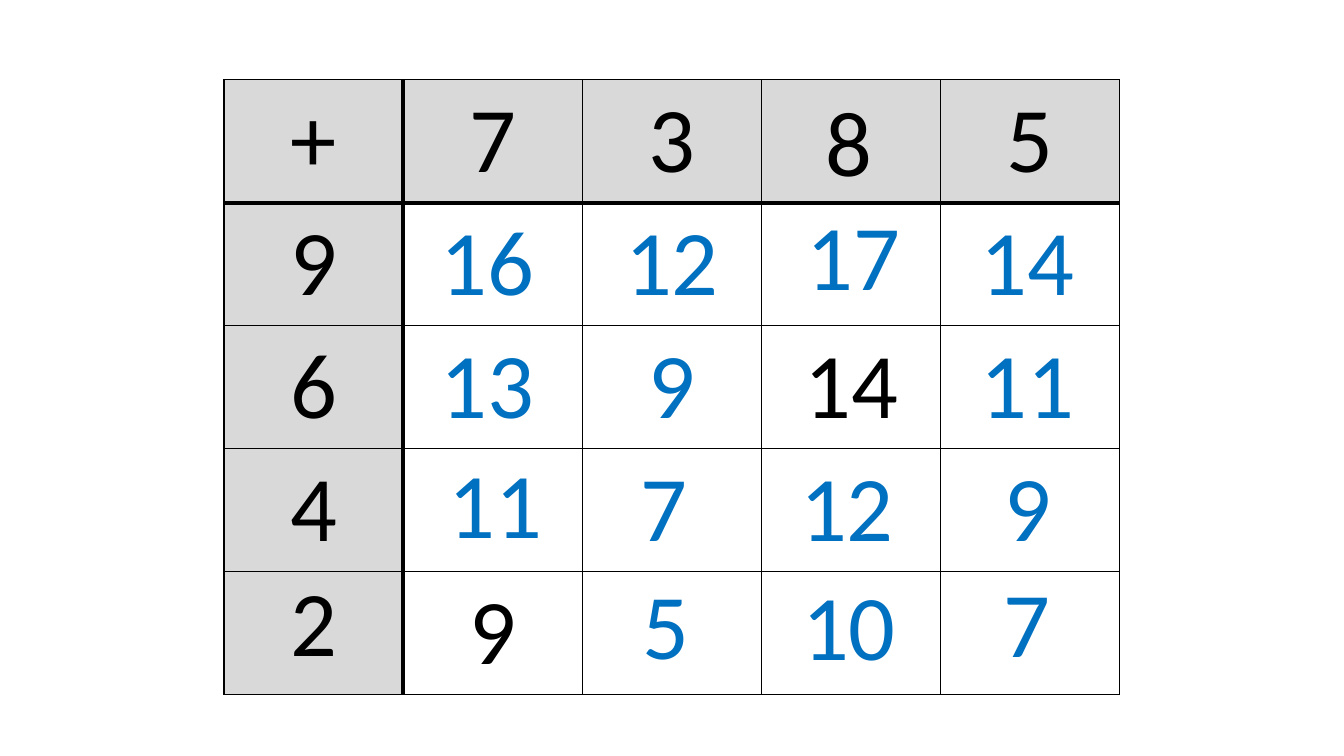
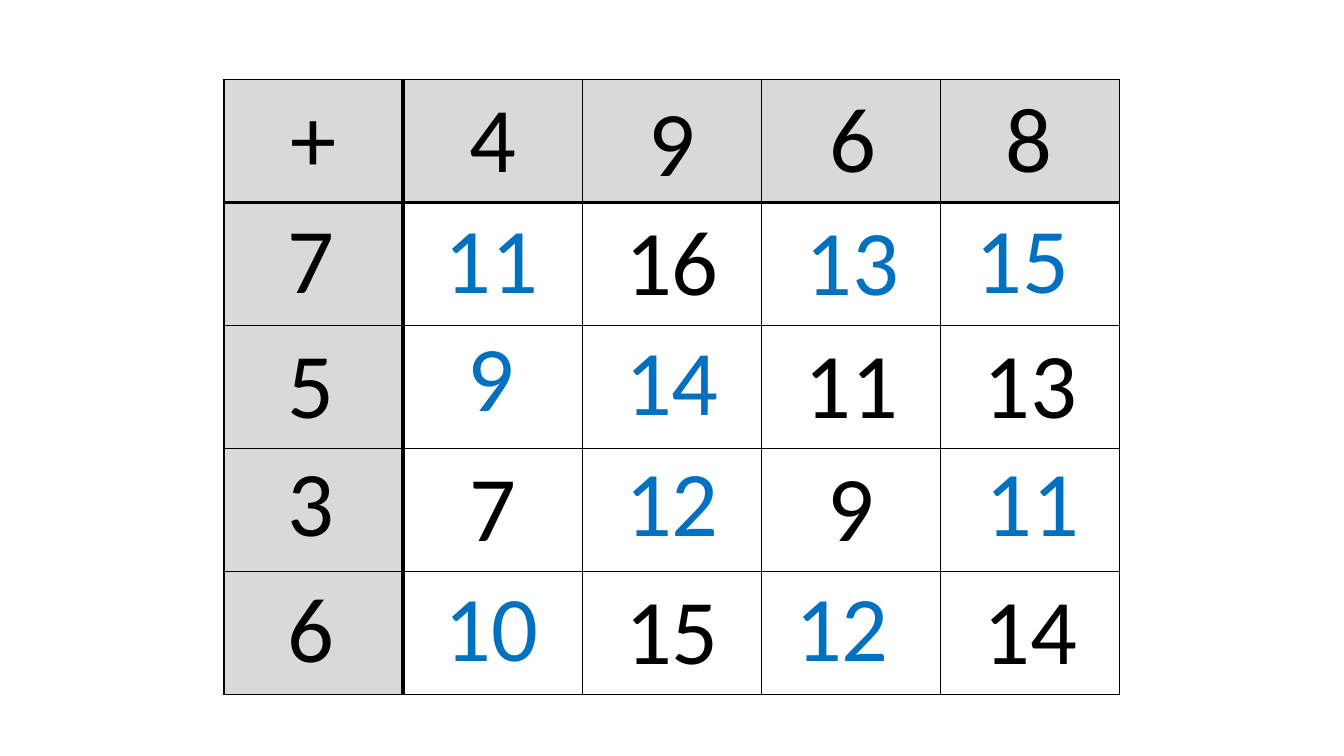
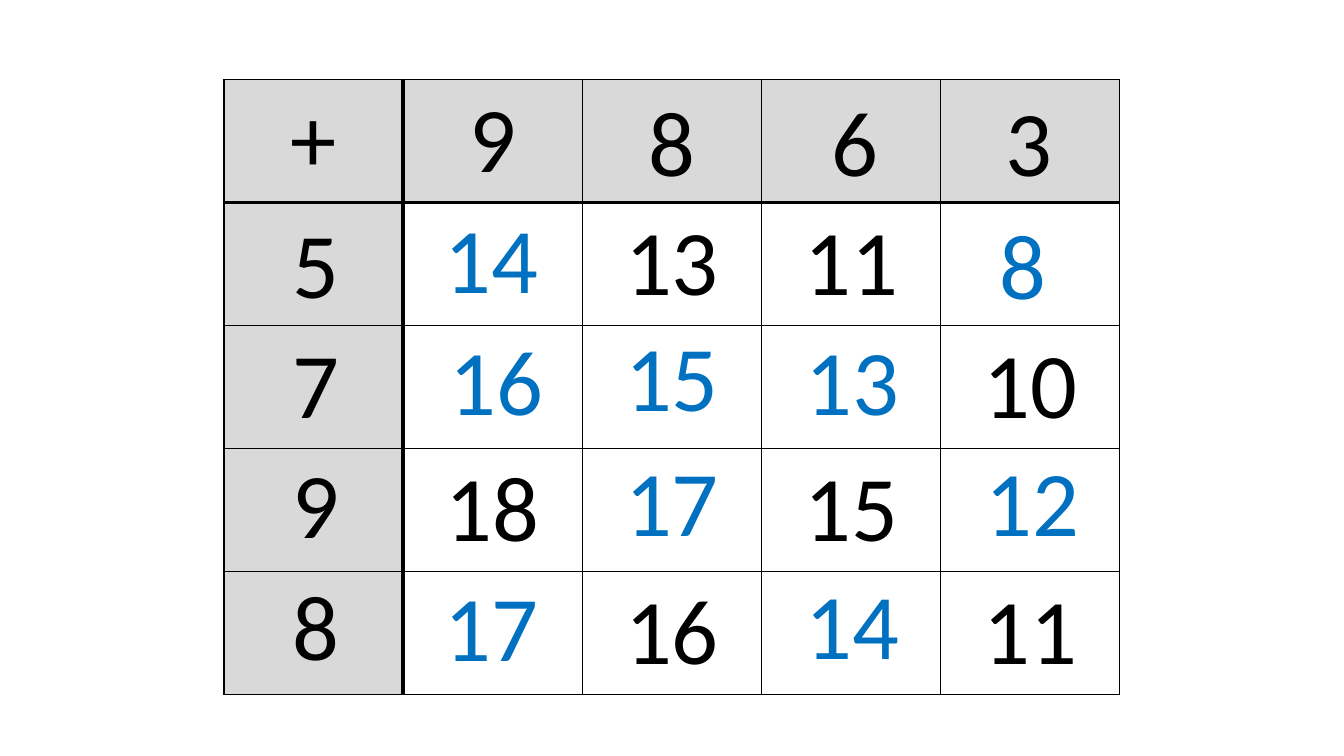
import pptx
import pptx.dml.color
import pptx.enum.text
import pptx.oxml
import pptx.oxml.ns
import pptx.util

Pt = pptx.util.Pt
RGBColor = pptx.dml.color.RGBColor
PP_ALIGN = pptx.enum.text.PP_ALIGN
MSO_ANCHOR = pptx.enum.text.MSO_ANCHOR
MSO_AUTO_SIZE = pptx.enum.text.MSO_AUTO_SIZE

# Shared style
BLACK = RGBColor(0x00, 0x00, 0x00)
WHITE = RGBColor(0xFF, 0xFF, 0xFF)
HEADER_GRAY = RGBColor(0xD9, 0xD9, 0xD9)
ANSWER_BLUE = RGBColor(0x00, 0x70, 0xC0)
FONT = "Calibri"
FONT_SIZE = 66
THIN, THICK = 1, 3

# Shared grid, in points
SLIDE_WIDTH, SLIDE_HEIGHT = 960, 540
GRID_LEFT, GRID_TOP = 160, 56.88
CELL_WIDTH, CELL_HEIGHT = 128, 87.84
GRID_SIZE = 5
BOX_WIDTH, BOX_HEIGHT = 103, 87.12

# Addends of each slide; numbers in "loose" stand in text boxes, keyed by
# (row, column), with their shift in points from the centre of the cell.
EXERCISES = [
    {
        "top": (7, 3, 8, 5),
        "side": (9, 6, 4, 2),
        "loose": {
            (1, 1): (-4, -3), (1, 2): (0, -3), (1, 4): (-2, -3),
            (2, 1): (-4, -3.5), (2, 2): (0, -3.5),
            (3, 1): (2, -5), (3, 2): (-6, -3.5),
            (2, 4): (-2, -3.5), (3, 4): (-2, -3.5),
            (4, 0): (0, -8.5), (0, 3): (-1.5, 0),
            (1, 3): (1.5, -7), (3, 3): (-3, -3.5), (4, 3): (-1.5, -6),
            (4, 2): (-4.5, -7), (4, 4): (-2.5, -8),
        },
    },
    {
        "top": (4, 9, 6, 8),
        "side": (7, 5, 3, 6),
        "loose": {
            (3, 0): (-2, -6.5), (0, 3): (1, -3), (2, 0): (-2, -3.5),
            (0, 4): (-1, -3), (4, 0): (-2, -4.5), (0, 2): (0, 0),
            (1, 0): (-2, -4.5),
            (1, 1): (-1, -4.5), (1, 3): (1, -3), (1, 4): (-5.5, -4.5),
            (2, 1): (-1, -8), (2, 2): (0, -5),
            (3, 2): (0, -7), (3, 4): (1.5, -7),
            (4, 1): (-1, -5), (4, 3): (-6.5, -5),
        },
    },
    {
        "top": (9, 8, 6, 3),
        "side": (5, 7, 9, 8),
        "loose": {
            (3, 0): (2, -5), (0, 3): (3, 0), (1, 0): (2, -1),
            (0, 2): (0, 0), (4, 0): (2, -6), (0, 4): (-1, 0),
            (2, 0): (2, -3),
            (1, 1): (-1, -4.5), (1, 4): (-5.5, 0),
            (2, 1): (2.5, -5), (2, 2): (0, -8), (2, 3): (1, -5),
            (3, 2): (0, -7), (3, 4): (1.5, -7),
            (4, 1): (-1, -5), (4, 3): (1, -6.5),
        },
    },
]


def cell_text(exercise, row, column):
    """Plus sign in the corner, addends along the edges, sums inside."""
    if row == 0 and column == 0:
        return "+"
    addend_above = exercise["top"][column - 1] if column else 0
    addend_beside = exercise["side"][row - 1] if row else 0
    return str(addend_above + addend_beside)


def write_number(text_frame, text, color):
    text_frame.text = text
    paragraph = text_frame.paragraphs[0]
    paragraph.alignment = PP_ALIGN.CENTER
    font = paragraph.runs[0].font
    font.name = FONT
    font.size = Pt(FONT_SIZE)
    font.bold = False
    font.color.rgb = color


def set_borders(cell, row, column):
    """Thin lines everywhere, thick ones beside the header row and column."""
    widths = {
        "lnL": THICK if column == 1 else THIN,
        "lnR": THICK if column == 0 else THIN,
        "lnT": THICK if row == 1 else THIN,
        "lnB": THICK if row == 0 else THIN,
    }
    properties = cell._tc.get_or_add_tcPr()
    for tag, width in widths.items():
        properties.append(pptx.oxml.parse_xml(
            f'<a:{tag} {pptx.oxml.ns.nsdecls("a")} w="{Pt(width)}">'
            f'<a:solidFill><a:srgbClr val="{BLACK}"/></a:solidFill></a:{tag}>'))


def add_grid(slide, exercise, left, top):
    table = slide.shapes.add_table(
        GRID_SIZE, GRID_SIZE, Pt(left), Pt(top),
        Pt(GRID_SIZE * CELL_WIDTH), Pt(GRID_SIZE * CELL_HEIGHT)).table
    table.first_row = False
    table.horz_banding = False
    for row in range(GRID_SIZE):
        table.rows[row].height = Pt(CELL_HEIGHT)
        for column in range(GRID_SIZE):
            cell = table.cell(row, column)
            set_borders(cell, row, column)
            cell.fill.solid()
            is_header = row == 0 or column == 0
            cell.fill.fore_color.rgb = HEADER_GRAY if is_header else WHITE
            cell.vertical_anchor = MSO_ANCHOR.MIDDLE
            if (row, column) not in exercise["loose"]:
                write_number(cell.text_frame,
                             cell_text(exercise, row, column), BLACK)


def add_loose_numbers(slide, exercise, left, top):
    for (row, column), (shift_x, shift_y) in exercise["loose"].items():
        box_left = (left + column * CELL_WIDTH
                    + (CELL_WIDTH - BOX_WIDTH) / 2 + shift_x)
        box_top = top + row * CELL_HEIGHT + shift_y
        box = slide.shapes.add_textbox(
            Pt(box_left), Pt(box_top), Pt(BOX_WIDTH), Pt(BOX_HEIGHT))
        box.text_frame.word_wrap = True
        box.text_frame.auto_size = MSO_AUTO_SIZE.SHAPE_TO_FIT_TEXT
        is_header = row == 0 or column == 0
        write_number(box.text_frame, cell_text(exercise, row, column),
                     BLACK if is_header else ANSWER_BLUE)


def add_exercise_slide(presentation, exercise):
    slide = presentation.slides.add_slide(presentation.slide_layouts[6])
    add_grid(slide, exercise, GRID_LEFT, GRID_TOP)
    add_loose_numbers(slide, exercise, GRID_LEFT, GRID_TOP)


def main():
    presentation = pptx.Presentation()
    presentation.slide_width = Pt(SLIDE_WIDTH)
    presentation.slide_height = Pt(SLIDE_HEIGHT)
    for exercise in EXERCISES:
        add_exercise_slide(presentation, exercise)
    presentation.save("out.pptx")


if __name__ == "__main__":
    main()
